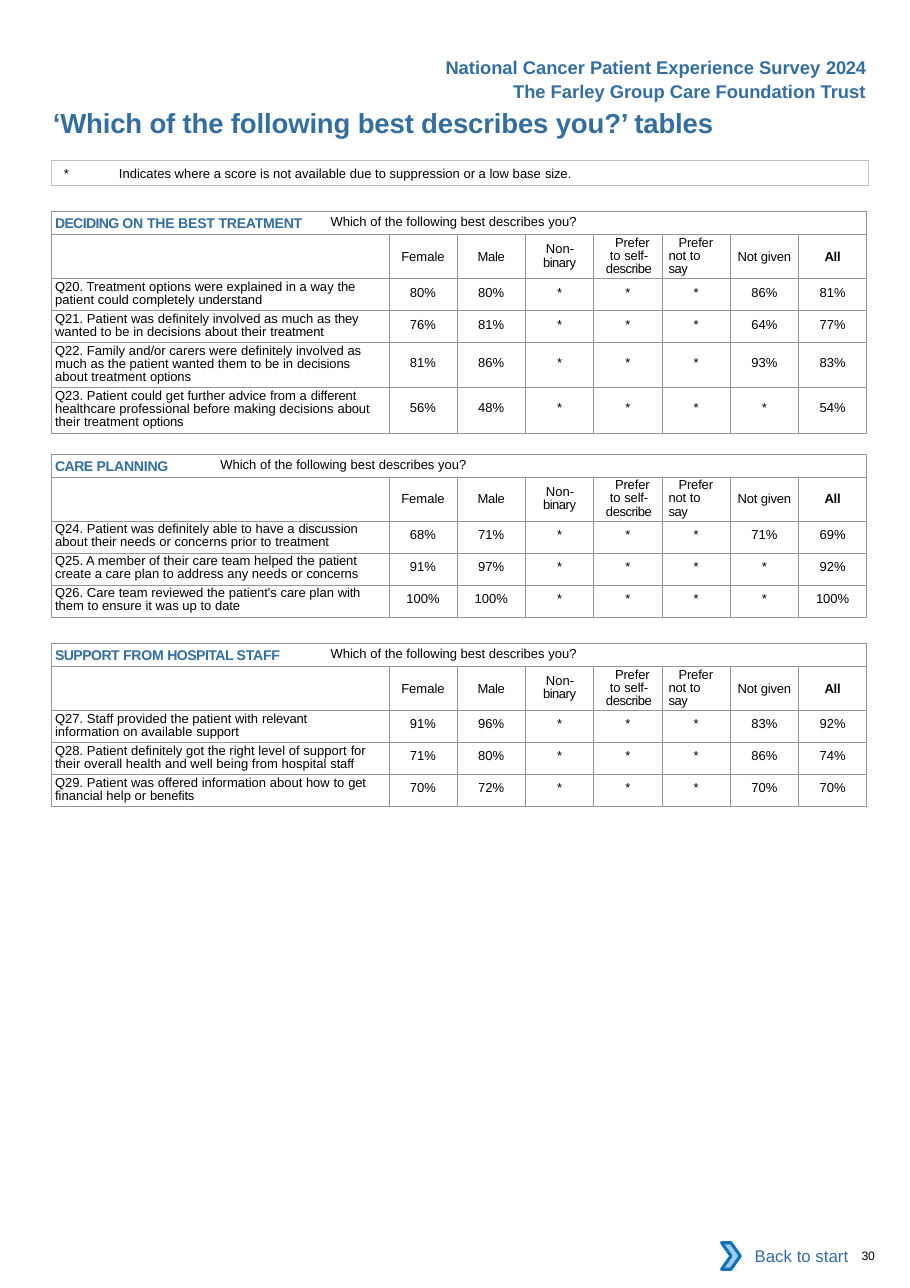
from lxml.etree import SubElement
from pptx import Presentation
from pptx.dml.color import RGBColor
from pptx.enum.shapes import MSO_SHAPE
from pptx.enum.text import MSO_ANCHOR, PP_ALIGN
from pptx.oxml import parse_xml
from pptx.oxml.ns import nsdecls, qn
from pptx.util import Pt

PX = 9144  # 100 px to the inch
BLUE, BLACK, GREY = "336E9F", "000000", "939598"
LEFT, CENTER, RIGHT = PP_ALIGN.LEFT, PP_ALIGN.CENTER, PP_ALIGN.RIGHT
TABLE_LEFT, QUESTION_W, SCORE_W = 47, 306, 62
HEADING_H, LABELS_H, LINE_H = 21, 40, 12
QUESTION_RIGHT = 10

# Column labels: runs of (text, tracking), then paragraph options
LABELS = [
    ([("Female", 0)], {}),
    ([("Male", -0.2)], {}),
    ([("Non- ", 0), ("binary", -0.3)],
     dict(left=15, first=1, right=15, leading=8.6)),
    ([("Prefer ", -0.1), ("to ", 0), ("self- ", -0.1), ("describe", -0.3)],
     dict(left=10, first=6, right=8, leading=8.6)),
    ([("Prefer not ", -0.1), ("to ", 0), ("say", -0.3)],
     dict(align=LEFT, left=6, first=9, right=12, leading=8.6)),
    ([("Not given", -0.1)], {}),
    ([("All", -0.2)], dict(bold=True)),
]

# Tables: top, heading, rows of (question, scores, right margin if special);
# "|" switches between normal and tightened tracking
TABLES = [
    (192, [("DECIDING ", -0.4), ("ON ", 0), ("THE BEST TREATMENT\t", -0.1)], [
        ("Q20. Treatment options were explained in a way |the |"
         "patient could completely |understand", "80% 80% * * * 86% 81%"),
        ("Q21. Patient was definitely involved as much as| they |"
         "wanted to be in decisions about their |treatment",
         "76% 81% * * * 64% 77%"),
        ("Q22. Family and/or carers were definitely involved| as |"
         "much as the patient wanted them to be in |decisions |"
         "about treatment |options", "81% 86% * * * 93% 83%"),
        ("Q23. Patient could get further advice from a |different |"
         "healthcare professional before making decisions |about |"
         "their treatment |options", "56% 48% * * * * 54%"),
    ]),
    (412, [("CARE ", -0.3), ("PLANNING\t", -0.1)], [
        ("Q24. Patient was definitely able to have a |discussion |"
         "about their needs or concerns prior to |treatment",
         "68% 71% * * * 71% 69%"),
        ("Q25. A member of their care team helped the |patient |"
         "create a care plan to address any needs or |concerns",
         "91% 97% * * * * 92%"),
        ("Q26. Care team reviewed the patient's care plan| with |"
         "them to ensure it was up to |date", "100% 100% * * * * 100%"),
    ]),
    (584, [("SUPPORT ", -0.3), ("FROM ", -0.1), ("HOSPITAL ", -0.3),
           ("STAFF\t", -0.1)], [
        ("Q27. Staff provided the patient with |relevant |"
         "information on available |support", "91% 96% * * * 83% 92%", 30),
        ("Q28. Patient definitely got the right level of support |for |"
         "their overall health and well being from hospital |staff",
         "71% 80% * * * 86% 74%"),
        ("Q29. Patient was offered information about how to |get |"
         "financial help or |benefits", "70% 72% * * * 70% 70%"),
    ]),
]


def rgb(color):
    return RGBColor.from_string(color)


def add_run(p, text, size=8.5, color=BLACK, bold=False, tracking=0, baseline=0):
    r = p.add_run()
    r.text = text
    r.font.name, r.font.size, r.font.bold = "Arial", Pt(size), bold
    r.font.color.rgb = rgb(color)
    rPr = r.font._element
    if tracking:
        rPr.set("spc", str(round(tracking * 100)))
    if baseline:
        rPr.set("baseline", str(baseline * 1000))


def format_paragraph(p, align=LEFT, left=0, first=0, right=0, leading=None, tab=None):
    p.alignment = align
    if leading:
        p.line_spacing = Pt(leading)
    pPr = p._p.get_or_add_pPr()
    for name, value in (("marL", left), ("indent", first), ("marR", right)):
        pPr.set(name, str(value * PX))
    if tab:
        tabs = SubElement(pPr, qn("a:tabLst"))
        SubElement(tabs, qn("a:tab"), pos=str(tab * PX), algn="l")


def set_margins(frame, top=0, bottom=0):
    frame.margin_left = frame.margin_right = 0
    frame.margin_top, frame.margin_bottom = top * PX, bottom * PX


def add_text(s, x, y, w, h, runs, size, color=BLUE, bold=True, align=LEFT, inset=False):
    sp = s.shapes.add_textbox(x * PX, y * PX, w * PX, h * PX)
    tf = sp.text_frame
    tf.word_wrap = not inset
    if not inset:
        set_margins(tf)
    p = tf.paragraphs[0]
    format_paragraph(p, align)
    for text, tracking in runs:
        add_run(p, text, size, color, bold, tracking)


def add_box(shapes, kind, x, y, w, h, fill=None, line=None, weight=0.5):
    sp = shapes.add_shape(kind, x * PX, y * PX, w * PX, h * PX)
    sp.shadow.inherit = False
    if fill:
        sp.fill.solid()
        sp.fill.fore_color.rgb = rgb(fill)
    else:
        sp.fill.background()
    if line:
        sp.line.color.rgb = rgb(line)
        sp.line.width = Pt(weight)
    else:
        sp.line.fill.background()
    return sp


def style_cell(cell):
    set_margins(cell)
    cell.fill.background()
    tcPr = cell._tc.get_or_add_tcPr()
    for i, side in enumerate("LRTB"):
        tcPr.insert(i, parse_xml(
            f'<a:ln{side} {nsdecls("a")} w="{Pt(0.5)}"><a:solidFill>'
            f'<a:srgbClr val="{GREY}"/></a:solidFill></a:ln{side}>'))


def fill_cell(cell, runs, top=0, middle=False, bold=False, **layout):
    set_margins(cell, top)
    cell.vertical_anchor = MSO_ANCHOR.MIDDLE if middle else MSO_ANCHOR.TOP
    p = cell.text_frame.paragraphs[0]
    format_paragraph(p, **layout)
    for text, tracking in runs:
        add_run(p, text, bold=bold, tracking=tracking)


def add_score_table(s, top, heading, rows):
    # Three-line questions take a taller row
    heights = [HEADING_H, LABELS_H]
    heights += [5 + LINE_H * (3 if row[0].count("|") > 3 else 2) for row in rows]
    widths = [QUESTION_W] + [SCORE_W] * len(LABELS)
    table = s.shapes.add_table(len(heights), len(widths), TABLE_LEFT * PX, top * PX,
                               sum(widths) * PX, sum(heights) * PX).table
    table.first_row = table.horz_banding = False
    for column, w in zip(table.columns, widths):
        column.width = w * PX
    for row, h in zip(table.rows, heights):
        row.height = h * PX
    for cell in table.iter_cells():
        style_cell(cell)

    # Heading row
    cell = table.cell(0, 0)
    cell.merge(table.cell(0, len(LABELS)))
    cell.vertical_anchor = MSO_ANCHOR.MIDDLE
    p = cell.text_frame.paragraphs[0]
    format_paragraph(p, left=3, leading=11.8, tab=424)
    for text, tracking in heading:
        add_run(p, text, 15.8, BLUE, True, tracking, baseline=-8)
    add_run(p, "Which of the following best describes you?")

    # Column labels
    for c, (runs, options) in enumerate(LABELS, 1):
        fill_cell(table.cell(1, c), runs, middle=True, **{"align": CENTER, **options})

    # Questions and scores
    for i, (question, scores, *special) in enumerate(rows, 2):
        runs = [(text, -0.1 * (k % 2)) for k, text in enumerate(question.split("|"))]
        fill_cell(table.cell(i, 0), runs, top=2, left=3, leading=8.6,
                  right=special[0] if special else QUESTION_RIGHT)
        for c, score in enumerate(scores.split(), 1):
            fill_cell(table.cell(i, c), [(score, 0)], top=(heights[i] - 17) // 2,
                      align=CENTER)


def add_note(s):
    sp = add_box(s.shapes, MSO_SHAPE.RECTANGLE, TABLE_LEFT, 146, 741, 22, line="BFBFBF")
    tf = sp.text_frame
    tf.word_wrap = True
    tf.vertical_anchor = MSO_ANCHOR.TOP
    set_margins(tf, 4, 4)
    p = tf.paragraphs[0]
    format_paragraph(p, left=11, tab=34)
    add_run(p, "*", tracking=-0.5)
    add_run(p, "\tIndicates where a score is not available due to "
               "suppression or a low base ")
    add_run(p, "size", tracking=-0.1)
    add_run(p, ".", 8)


def add_back_button(s):
    shapes = s.shapes.add_group_shape().shapes
    sp = add_box(shapes, MSO_SHAPE.RECTANGLE, 662, 1119, 118, 42, fill="FFFFFF")
    sp.text_frame.vertical_anchor = MSO_ANCHOR.MIDDLE
    p = sp.text_frame.paragraphs[0]
    format_paragraph(p, RIGHT)
    add_run(p, "Back to start", 11, BLUE)
    add_box(shapes, MSO_SHAPE.CHEVRON, 655, 1128, 17, 24, "A8C7E9", "0A74BB", 2)


def main():
    prs = Presentation()
    prs.slide_width, prs.slide_height = 826 * PX, 1169 * PX
    s = prs.slides.add_slide(prs.slide_layouts[6])

    # Page header
    add_text(s, 392, 46, 404, 30,
             [("National Cancer Patient Experience Survey ", 0), ("2024", -0.2)],
             12, align=RIGHT, inset=True)
    add_text(s, 446, 68, 350, 30, [("The Farley Group Care Foundation Trust", 0)],
             12, align=RIGHT, inset=True)
    add_text(s, 48, 96, 625, 30,
             [("‘Which of the following best describes you?’ tables", -0.1)], 18)
    add_note(s)

    # Score tables
    for top, heading, rows in TABLES:
        add_score_table(s, top, heading, rows)

    # Page footer
    add_back_button(s)
    add_text(s, 782, 1133, 41, 13, [("30", -0.2)], 8, BLACK, bold=False)
    prs.save("out.pptx")


if __name__ == "__main__":
    main()
